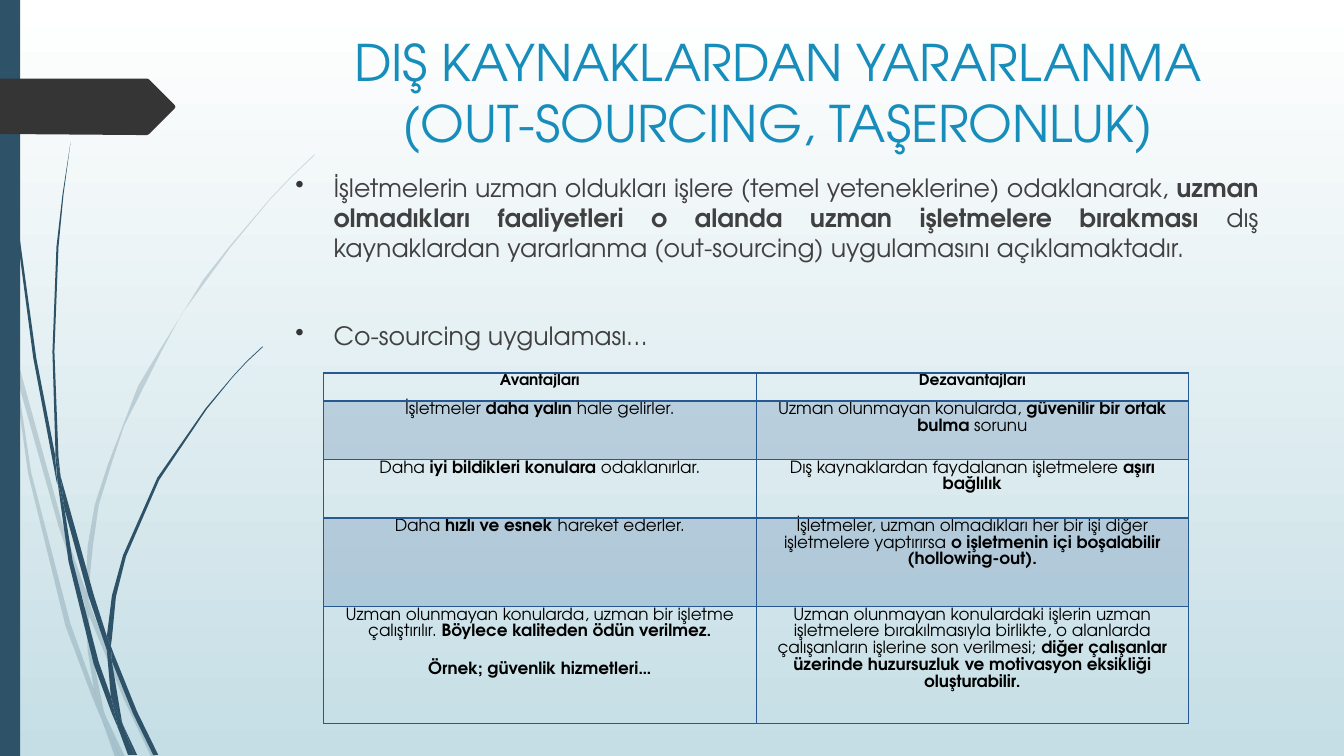
from dataclasses import dataclass

from lxml import etree
from pptx import Presentation
from pptx.dml.color import RGBColor
from pptx.enum.shapes import MSO_SHAPE
from pptx.enum.text import MSO_ANCHOR, PP_ALIGN
from pptx.oxml.ns import qn
from pptx.util import Pt

PX = 9144  # EMU per px, 100 px to the inch
FONT = "TeX Gyre Adventor"
CENTER, JUSTIFY = PP_ALIGN.CENTER, PP_ALIGN.JUSTIFY
TOP = MSO_ANCHOR.TOP
RECTANGLE = MSO_SHAPE.RECTANGLE

WHITE = RGBColor(0xFF, 0xFF, 0xFF)
BLACK = RGBColor(0, 0, 0)
PALE_BLUE = RGBColor(0xC5, 0xDE, 0xE5)
NAVY = RGBColor(0x2E, 0x53, 0x69)
CHARCOAL = RGBColor(0x35, 0x35, 0x35)
GRAY = RGBColor(0x40, 0x40, 0x40)
TITLE_BLUE = RGBColor(0x17, 0x8D, 0xBB)
TABLE_BLUE = RGBColor(0x26, 0x59, 0x91)

Points = list[tuple[int, int]]


@dataclass
class Style:
    size: int
    color: RGBColor
    align: PP_ALIGN


@dataclass
class Para:
    text: str  # **bold** marks
    space_before: int = 0


@dataclass
class Row:
    height: int
    cells: list[list[Para]]
    size: int = 12
    shaded: bool = False


TITLE = Para("DIŞ KAYNAKLARDAN YARARLANMA (OUT-SOURCING, TAŞERONLUK)")
BULLETS = [
    Para("İşletmelerin uzman oldukları işlere (temel yeteneklerine) odaklanarak, **uzman olmadıkları "
         "faaliyetleri o alanda uzman işletmelere bırakması **dış kaynaklardan yararlanma "
         "(out-sourcing) uygulamasını açıklamaktadır.", 10),
    Para("Co-sourcing uygulaması…", 41),
]
ROWS = [
    Row(28, [[Para("**Avantajları**")], [Para("**Dezavantajları**")]], size=11),
    Row(58, [[Para("İşletmeler **daha yalın **hale gelirler.")],
             [Para("Uzman olunmayan konularda, **güvenilir bir ortak bulma **sorunu")]], shaded=True),
    Row(58, [[Para("Daha **iyi bildikleri konulara **odaklanırlar.")],
             [Para("Dış kaynaklardan faydalanan işletmelere **aşırı bağlılık**")]]),
    Row(88, [[Para("Daha **hızlı ve esnek **hareket ederler.")],
             [Para("İşletmeler, uzman olmadıkları her bir işi diğer işletmelere yaptırırsa "
                   "**o işletmenin içi boşalabilir (hollowing-out).**")]], shaded=True),
    Row(116, [[Para("Uzman olunmayan konularda, uzman bir işletme çalıştırılır. "
                    "**Böylece kaliteden ödün verilmez.**"),
               Para("**Örnek; güvenlik hizmetleri…**", 15)],
              [Para("Uzman olunmayan konulardaki işlerin uzman işletmelere bırakılmasıyla birlikte, "
                    "o alanlarda çalışanların işlerine son verilmesi; **diğer çalışanlar üzerinde "
                    "huzursuzluk ve motivasyon eksikliği oluşturabilir.**")]]),
]

PALE_STRANDS: list[Points] = [
    [(11, 350), (9, 322), (0, 282), (0, 299), (10, 344)],
    [(58, 522), (84, 599), (85, 586), (62, 520), (14, 345), (17, 376)],
    [(92, 607), (88, 596), (88, 610), (123, 694), (150, 751), (155, 751), (127, 692)],
    [(119, 751), (124, 751), (105, 711)],
    [(93, 683), (70, 619), (31, 469), (17, 376), (11, 350), (28, 470), (65, 621), (92, 693),
     (101, 714), (99, 707)],
    [(84, 599), (87, 646), (93, 683), (96, 692), (105, 711), (103, 706), (91, 646), (88, 610),
     (88, 608)],
    [(88, 584), (92, 543), (98, 501), (110, 462), (123, 423), (160, 349), (180, 312), (229, 245),
     (268, 198), (290, 175), (312, 154), (312, 153), (289, 175), (268, 197), (228, 244),
     (202, 277), (158, 348), (137, 383), (107, 461), (94, 501), (87, 542), (85, 584), (85, 586),
     (88, 596)],
    [(101, 714), (114, 751), (119, 751)],
    [(88, 608), (88, 610), (88, 596), (85, 586), (84, 599)],
    [(96, 692), (93, 683), (99, 707), (101, 714), (119, 751), (105, 711)],
]
DARK_STRANDS: list[Points] = [
    [(7, 110), (17, 233), (33, 355), (56, 477), (57, 481), (55, 457), (55, 453), (36, 355),
     (19, 232), (8, 109), (5, 48), (4, 0), (3, 0), (4, 48)],
    [(88, 592), (106, 645), (106, 631), (93, 590), (60, 472), (64, 505)],
    [(113, 649), (110, 641), (111, 656), (132, 708), (152, 749), (157, 749), (136, 706)],
    [(110, 691), (98, 657), (72, 556), (64, 505), (57, 477), (68, 557), (93, 659), (111, 708),
     (117, 722), (116, 717)],
    [(60, 472), (58, 453), (54, 349), (58, 245), (63, 193), (70, 141), (62, 193), (56, 245),
     (52, 349), (55, 449)],
    [(133, 749), (136, 749), (122, 719)],
    [(57, 477), (64, 505), (60, 472), (55, 449), (55, 453)],
    [(111, 633), (115, 592), (125, 552), (158, 476), (205, 406), (231, 374), (245, 359),
     (261, 344), (260, 344), (245, 358), (231, 373), (204, 405), (156, 474), (122, 551),
     (111, 591), (106, 631), (110, 641)],
    [(117, 722), (127, 749), (131, 749)],
    [(106, 645), (110, 691), (116, 706), (122, 719), (121, 716), (111, 656), (109, 651)],
    [(106, 645), (109, 651), (111, 656), (110, 641), (106, 631)],
    [(116, 706), (110, 691), (116, 717), (117, 722), (130, 749), (133, 749), (122, 719)],
]
PAGE_ARROW: Points = [(0, 78), (146, 78), (148, 79), (173, 104), (174, 106), (173, 108), (148, 133),
                      (146, 134), (136, 134), (0, 133)]


def paint(s, color: RGBColor) -> None:
    s.shadow.inherit = False
    s.fill.solid()
    s.fill.fore_color.rgb = color
    s.line.fill.background()


def set_alpha(holder, percent: int) -> None:
    """Make the solid fill inside the given XML element translucent."""
    color = holder.find(f"{qn('a:solidFill')}/{qn('a:srgbClr')}")
    etree.SubElement(color, qn("a:alpha"), val=str(percent * 1000))


def add_polygon(slide, points: Points, color: RGBColor, alpha: int = 100) -> None:
    builder = slide.shapes.build_freeform(*points[0], scale=PX)
    builder.add_line_segments(points[1:], close=True)
    sp = builder.convert_to_shape()
    paint(sp, color)
    if alpha < 100:
        set_alpha(sp._element.spPr, alpha)


def write(tf, paras: list[Para], style: Style) -> None:
    tf.word_wrap = True
    for i, para in enumerate(paras):
        p = tf.add_paragraph() if i else tf.paragraphs[0]
        p.alignment = style.align
        p.space_before = Pt(para.space_before)
        for j, part in enumerate(para.text.split("**")):
            if part:
                r = p.add_run()
                r.text = part
                r.font.name, r.font.size = FONT, Pt(style.size)
                r.font.bold = j % 2 == 1
                r.font.color.rgb = style.color


def add_bullet(p) -> None:
    pPr = p._p.get_or_add_pPr()
    pPr.set("marL", str(38 * PX))
    pPr.set("indent", str(-38 * PX))
    color = etree.SubElement(pPr, qn("a:buClr"))
    etree.SubElement(color, qn("a:srgbClr"), val=str(CHARCOAL))
    etree.SubElement(pPr, qn("a:buChar"), char="•")


def set_borders(cell, widths: dict[str, int]) -> None:
    tcPr = cell._tc.get_or_add_tcPr()
    for i, (side, width) in enumerate(widths.items()):
        ln = etree.Element(qn(f"a:ln{side}"), w=str(Pt(width)))
        fill = etree.SubElement(ln, qn("a:solidFill"))
        etree.SubElement(fill, qn("a:srgbClr"), val=str(TABLE_BLUE))
        tcPr.insert(i, ln)


def add_comparison(slide) -> None:
    height = sum(row.height for row in ROWS)
    table = slide.shapes.add_table(len(ROWS), 2, 321 * PX, 370 * PX, 858 * PX, height * PX).table
    table.first_row = table.horz_banding = False
    for i, row in enumerate(ROWS):
        table.rows[i].height = row.height * PX
        for j, paras in enumerate(row.cells):
            cell = table.cell(i, j)
            cell.margin_left = cell.margin_right = 7 * PX
            cell.margin_top = cell.margin_bottom = 0
            write(cell.text_frame, paras, Style(row.size, BLACK, CENTER))
            for p in cell.text_frame.paragraphs:
                p.line_spacing = 1.07
            if row.shaded:
                cell.fill.solid()
                cell.fill.fore_color.rgb = TABLE_BLUE
                set_alpha(cell._tc.tcPr, 20)
            else:
                cell.fill.background()
            set_borders(cell, {"L": 1, "R": 1, "T": 2 if i == 1 else 1, "B": 2 if i == 0 else 1})


def main() -> None:
    prs = Presentation()
    prs.slide_width, prs.slide_height = 1333 * PX, 750 * PX
    slide = prs.slides.add_slide(prs.slide_layouts[5])

    background = slide.background.fill
    background.gradient()
    background.gradient_angle = 270
    for stop, color in zip(background.gradient_stops, (WHITE, PALE_BLUE)):
        stop.color.rgb = color

    for strand in PALE_STRANDS:
        add_polygon(slide, strand, NAVY, 20)
    for strand in DARK_STRANDS:
        add_polygon(slide, strand, NAVY)
    paint(slide.shapes.add_shape(RECTANGLE, 0, 0, 20 * PX, 750 * PX), NAVY)
    add_polygon(slide, PAGE_ARROW, CHARCOAL)

    title = slide.shapes.title
    title.left, title.top, title.width, title.height = 284 * PX, 26 * PX, 975 * PX, 140 * PX
    title.text_frame.vertical_anchor = TOP
    write(title.text_frame, [TITLE], Style(36, TITLE_BLUE, CENTER))

    body = slide.shapes.add_textbox(283 * PX, 166 * PX, 975 * PX, 552 * PX)
    write(body.text_frame, BULLETS, Style(18, GRAY, JUSTIFY))
    for p in body.text_frame.paragraphs:
        add_bullet(p)

    add_comparison(slide)
    prs.save("out.pptx")


if __name__ == "__main__":
    main()
